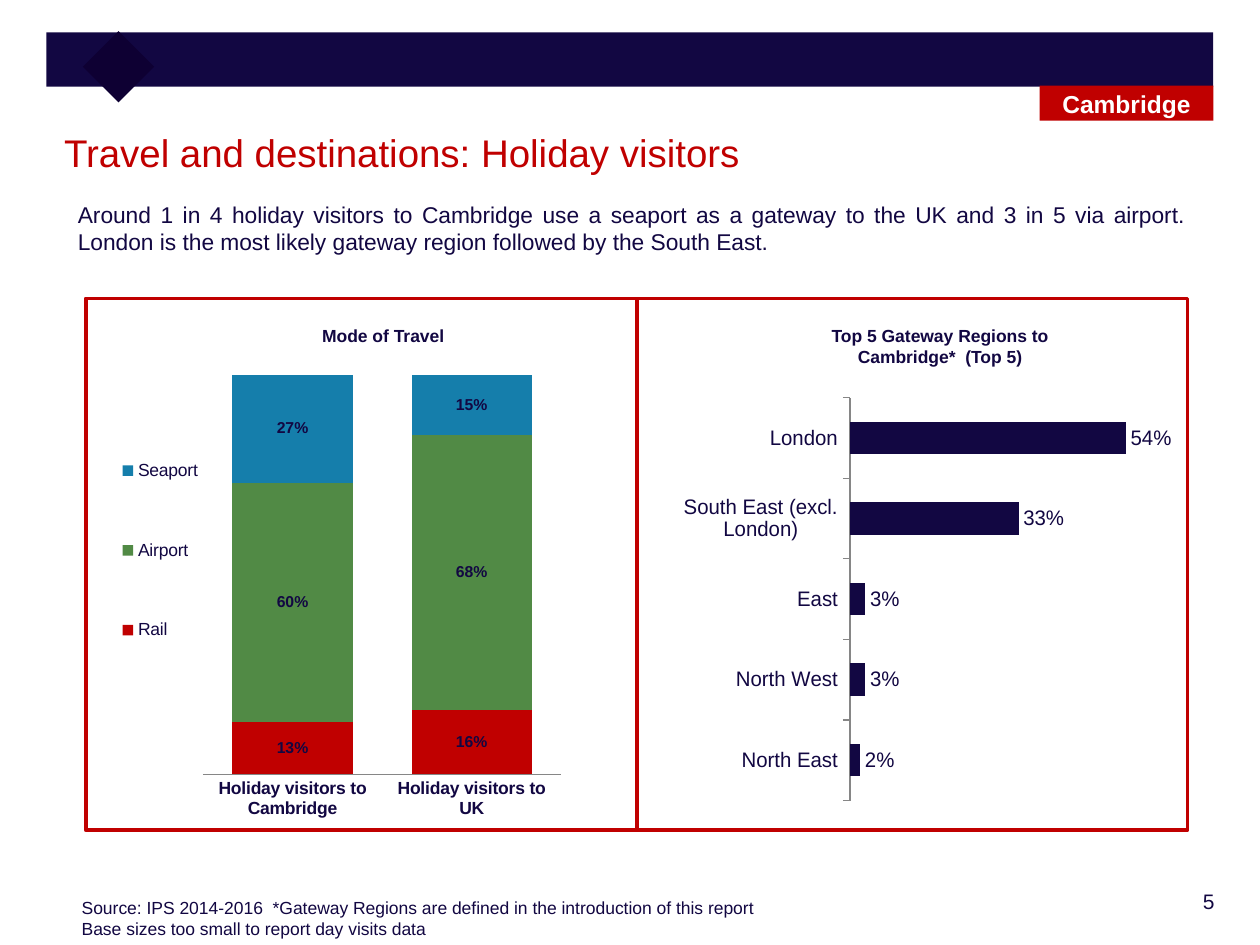
import pptx
import pptx.chart.data
import pptx.dml.color
import pptx.enum.chart
import pptx.enum.shapes
import pptx.enum.text
import pptx.oxml
import pptx.oxml.ns
import pptx.util

Pt = pptx.util.Pt
ALIGN = pptx.enum.text.PP_ALIGN
CHART = pptx.enum.chart.XL_CHART_TYPE
TICK = pptx.enum.chart.XL_TICK_MARK
COLORS = {
    "navy": "120742",
    "dark": "0E0033",
    "red": "C00000",
    "green": "518A45",
    "blue": "157EAB",
    "grey": "868686",
    "white": "FFFFFF",
}


class SlideBuilder:
    """Holds the style and the current slide and adds elements to it."""

    def __init__(self, page, font="Arial"):
        self.page = page
        self.font = font

    def color(self, name):
        return pptx.dml.color.RGBColor.from_string(COLORS[name])

    def style(self, font, size, color="navy", bold=False):
        font.name = self.font
        font.size = Pt(size)
        font.bold = bold
        font.color.rgb = self.color(color)

    def text(self, place, lines, size, color="navy", bold=False, align=ALIGN.LEFT):
        box = self.page.shapes.add_textbox(*map(Pt, place))
        frame = box.text_frame
        frame.word_wrap = True
        frame.text = "\n".join(lines)
        for para in frame.paragraphs:
            para.alignment = align
            self.style(para.font, size, color, bold)

    def rectangle(self, place, fill=None, line=None, rotation=0):
        kind = pptx.enum.shapes.MSO_SHAPE.RECTANGLE
        shape = self.page.shapes.add_shape(kind, *map(Pt, place))
        shape.shadow.inherit = False
        shape.rotation = rotation
        if fill:
            shape.fill.solid()
            shape.fill.fore_color.rgb = self.color(fill)
        else:
            shape.fill.background()
        if line:
            shape.line.color.rgb = self.color(line)
            shape.line.width = Pt(2.25)
        else:
            shape.line.fill.background()
        return shape

    def tag(self, place, label):
        shape = self.rectangle(place, fill="red")
        frame = shape.text_frame
        frame.text = label
        frame.vertical_anchor = pptx.enum.text.MSO_ANCHOR.MIDDLE
        para = frame.paragraphs[0]
        para.alignment = ALIGN.CENTER
        self.style(para.font, 14, "white", bold=True)

    def layout(self, parent, index, bounds, inner=False):
        for old in parent.findall(pptx.oxml.ns.qn("c:layout")):
            parent.remove(old)
        target = '<c:layoutTarget val="inner"/>' if inner else ""
        modes = "".join(f'<c:{key}Mode val="edge"/>' for key in "xy")
        sizes = "".join(f'<c:{key} val="{value}"/>' for key, value in zip("xywh", bounds))
        parent.insert(index, pptx.oxml.parse_xml(
            f'<c:layout {pptx.oxml.ns.nsdecls("c")}><c:manualLayout>'
            f"{target}{modes}{sizes}</c:manualLayout></c:layout>"))

    def chart(self, place, kind, categories, series, plot, gap, size, label_size, bold, tick):
        data = pptx.chart.data.CategoryChartData(number_format="0%")
        data.categories = categories
        for name, values, _ in series:
            data.add_series(name, values)
        chart = self.page.shapes.add_chart(kind, *map(Pt, place), data).chart
        chart.has_title = False
        chart.has_legend = False
        self.style(chart.font, size)
        self.layout(chart._chartSpace.chart.plotArea, 0, plot, inner=True)
        bars = chart.plots[0]
        bars.gap_width = gap
        bars.vary_by_categories = False
        for item, (_, _, color) in zip(bars.series, series):
            item.format.fill.solid()
            item.format.fill.fore_color.rgb = self.color(color)
            item.invert_if_negative = False
            labels = item.data_labels
            labels.show_value = True
            labels.number_format = "0%"
            labels.number_format_is_linked = False
            self.style(labels.font, label_size, bold=bold)
        chart.value_axis.visible = False
        chart.value_axis.has_major_gridlines = False
        axis = chart.category_axis
        axis.major_tick_mark = tick
        axis.minor_tick_mark = TICK.NONE
        axis.format.line.color.rgb = self.color("grey")
        axis.format.line.width = Pt(0.75)
        self.style(axis.tick_labels.font, size, bold=bold)
        return chart

    def legend(self, chart, bounds):
        chart.has_legend = True
        chart.legend.position = pptx.enum.chart.XL_LEGEND_POSITION.LEFT
        chart.legend.include_in_layout = False
        self.style(chart.legend.font, 10)
        self.layout(chart.legend._element, 1, bounds)


def main():
    deck = pptx.Presentation()
    deck.slide_width, deck.slide_height = Pt(720), Pt(540)
    slide = SlideBuilder(deck.slides.add_slide(deck.slide_layouts[6]))

    slide.text((614, 504, 87, 26), ["5"], 12, align=ALIGN.RIGHT)
    slide.rectangle((26.6, 18.5, 666.7, 31), fill="navy")
    slide.rectangle((53.3, 23.8, 28.8, 28.8), fill="dark", rotation=45)
    slide.text((29.5, 70, 663, 44), ["Travel and destinations: Holiday visitors"], 22, "red")
    slide.text((37.4, 111, 651.6, 53), [
        "Around 1 in 4 holiday visitors to Cambridge use a seaport as a gateway to the UK "
        "and 3 in 5 via airport.  London is the most likely gateway region followed by the South East."
    ], 13, align=ALIGN.JUSTIFY)

    slide.text((177, 182.2, 106, 22), ["Mode of Travel"], 10, bold=True)
    travel = slide.chart(
        (49, 198.7, 283.7, 275.8), CHART.COLUMN_STACKED_100,
        ["Holiday visitors to Cambridge", "Holiday visitors to UK"],
        [("Rail", (0.13, 0.16), "red"),
         ("Airport", (0.6, 0.68), "green"),
         ("Seaport", (0.27, 0.15), "blue")],
        (0.236, 0.056, 0.722, 0.828), 49, 10, 9, True, TICK.NONE)
    travel.plots[0].overlap = 100
    slide.legend(travel, (0.06, 0.11, 0.18, 0.62))

    slide.text((460.8, 182.2, 152.6, 33), ["Top 5 Gateway Regions to Cambridge*  (Top 5)"],
               10, bold=True, align=ALIGN.CENTER)
    regions = slide.chart(
        (366.5, 215.3, 303, 253.4), CHART.BAR_CLUSTERED,
        ["London", "South East (excl. London)", "East", "North West", "North East"],
        [("Series 1", (0.54, 0.33, 0.03, 0.03, 0.02), "navy")],
        (0.405, 0.047, 0.595, 0.909), 150, 12, 12, False, TICK.OUTSIDE)
    regions.category_axis.reverse_order = True
    regions.value_axis.minimum_scale = 0
    regions.value_axis.maximum_scale = 0.6

    panel_width = 314.8
    for column in range(2):
        slide.rectangle((49 + column * panel_width, 170.6, panel_width, 303.8), line="red")
    slide.tag((594, 49, 99.4, 20), "Cambridge")
    slide.text((39.6, 509, 653.8, 31.7), [
        "Source: IPS 2014-2016  *Gateway Regions are defined in the introduction of this report",
        "Base sizes too small to report day visits data",
    ], 10)
    deck.save("out.pptx")


if __name__ == "__main__":
    main()
